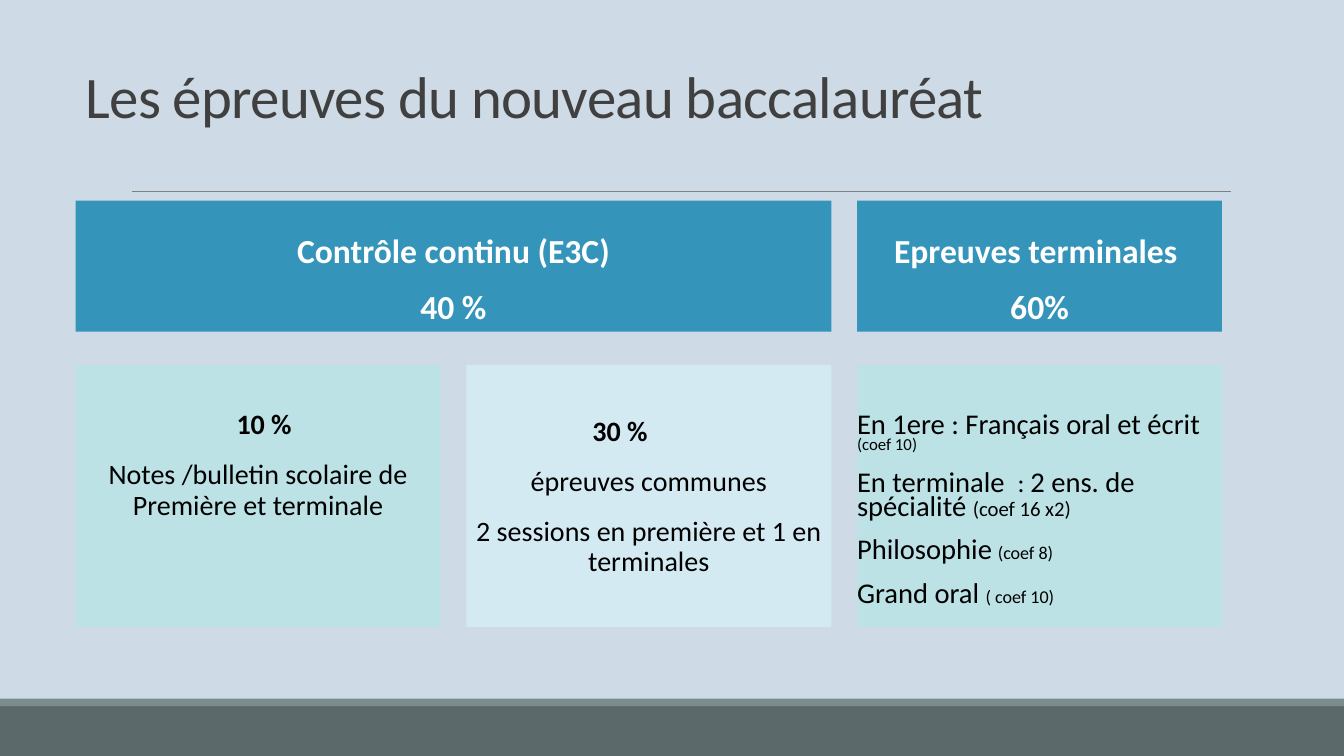
import pptx
import pptx.util
import pptx.dml.color
import pptx.enum.shapes
import pptx.enum.text
import lxml.etree

Inches = pptx.util.Inches
Pt = pptx.util.Pt
Align = pptx.enum.text.PP_ALIGN
Anchor = pptx.enum.text.MSO_ANCHOR
Kind = pptx.enum.shapes

COLORS = {
    "back": "CEDBE6", "foot": "5B696B", "strip": "7A8C8E", "rule": "808080",
    "title": "404040", "head": "3494BA", "teal": "BCE2E6", "sky": "D4EAF3",
    "white": "FFFFFF", "black": "000000",
}


def color(name):
    return pptx.dml.color.RGBColor.from_string(COLORS[name])


class Board:
    font = "Calibri"
    left, top = 0.75, 1.99
    wide, high = 3.62, 1.3
    step, drop = 3.875, 1.63

    def __init__(self, deck):
        self.deck = deck
        self.slide = deck.slides.add_slide(deck.slide_layouts[6])
        fill = self.slide.background.fill
        fill.solid()
        fill.fore_color.rgb = color("back")

    def rect(self, x, y, w, h, fill):
        shape = self.slide.shapes.add_shape(
            Kind.MSO_SHAPE.RECTANGLE, Inches(x), Inches(y), Inches(w), Inches(h))
        shape.shadow.inherit = False
        shape.fill.solid()
        shape.fill.fore_color.rgb = color(fill)
        shape.line.fill.background()
        return shape

    def band(self, y, h, fill):
        full = self.deck.slide_height.inches
        self.rect(0, full * y, self.deck.slide_width.inches, full * h, fill)

    def rule(self, x, y, end):
        line = self.slide.shapes.add_connector(
            Kind.MSO_CONNECTOR.STRAIGHT, Inches(x), Inches(y), Inches(end), Inches(y))
        line.line.color.rgb = color("rule")
        line.line.width = Pt(0.5)
        props = line.line._get_or_add_ln().getparent()
        lxml.etree.SubElement(props, pptx.oxml.ns.qn("a:effectLst"))

    def title(self, text):
        box = self.slide.shapes.add_textbox(
            Inches(self.left), Inches(0.39), Inches(11.37), Inches(0.95))
        frame = box.text_frame
        frame.word_wrap = True
        frame.vertical_anchor = Anchor.BOTTOM
        para = frame.paragraphs[0]
        run = para.add_run()
        run.text = text
        para.line_spacing = 0.85
        self.style(para.font, 42, "title")
        run.font._element.set("spc", "-50")

    def style(self, font, size, ink, bold=False):
        font.name = self.font
        font.size = Pt(size)
        font.bold = bold
        font.color.rgb = color(ink)

    def card(self, col, row, span, rows, fill, lines, size, ink="black", bold=1,
             anchor=Anchor.TOP, pads=(0.05, 0.05), space=0.9, align=Align.CENTER):
        shape = self.rect(self.left + col * self.step, self.top + row * self.drop,
                          self.wide + (span - 1) * self.step, rows * self.high, fill)
        frame = shape.text_frame
        frame.word_wrap = True
        frame.vertical_anchor = anchor
        frame.margin_left = frame.margin_right = 0
        frame.margin_top, frame.margin_bottom = map(Inches, pads)
        for i, parts in enumerate(lines):
            para = frame.add_paragraph() if i else frame.paragraphs[0]
            para.alignment = align
            para.line_spacing = space
            para.space_before = Pt(12 if i else 0)
            para.space_after = Pt(2)
            self.style(para.font, size, ink, i < bold)
            for text, small in parts:
                run = para.add_run()
                run.text = text
                if small:
                    run.font.size = Pt(small)
        return frame.paragraphs

    def indent(self, para, gap):
        para._p.get_or_add_pPr().set("marL", str(Inches(gap)))


def main():
    deck = pptx.Presentation()
    deck.slide_width, deck.slide_height = Inches(13.33), Inches(7.5)
    board = Board(deck)
    board.band(14 / 15, 1 / 15, "foot")
    board.band(0.924, 0.01, "strip")
    board.rule(1.31, 1.9, 12.21)
    board.title("Les épreuves du nouveau baccalauréat")

    heads = [(0, 2, "Contrôle continu (E3C)", "40 %"),
             (2, 1, "Epreuves terminales ", "60%")]
    for col, span, name, share in heads:
        board.card(col, 0, span, 1, "head", [[(name, None)], [(share, None)]],
                   24, "white", 2, Anchor.BOTTOM)

    marks = board.card(0, 1, 1, 2, "teal", [
        [("10 %", None)],
        [("Notes /bulletin scolaire de Première et terminale", None)],
    ], 20, anchor=Anchor.BOTTOM, pads=(0.05, 1.05))
    board.indent(marks[0], 0.12)

    tests = board.card(1, 1, 1, 2, "sky", [
        [("30 %", None)],
        [("épreuves communes", None)],
        [("2 sessions en première et 1 en terminales", None)],
    ], 20, pads=(0.52, 0.05))
    tests[0].alignment = Align.LEFT
    board.indent(tests[0], 1.25)

    board.card(2, 1, 1, 2, "teal", [
        [("En 1ere : Français oral et écrit ", None), ("(coef 10)", 12)],
        [("En terminale  ", None), (": ", 18.5), ("2 ens. de spécialité ", None),
         ("(coef 16 x2)", 14.8)],
        [("Philosophie", None), (" ", 18.5), ("(coef 8)", 12.9)],
        [("Grand oral ", None), ("( coef 10)", 12.9)],
    ], 20.4, bold=0, pads=(0.5, 0.05), space=0.7, align=Align.LEFT)
    deck.save("out.pptx")


if __name__ == "__main__":
    main()
